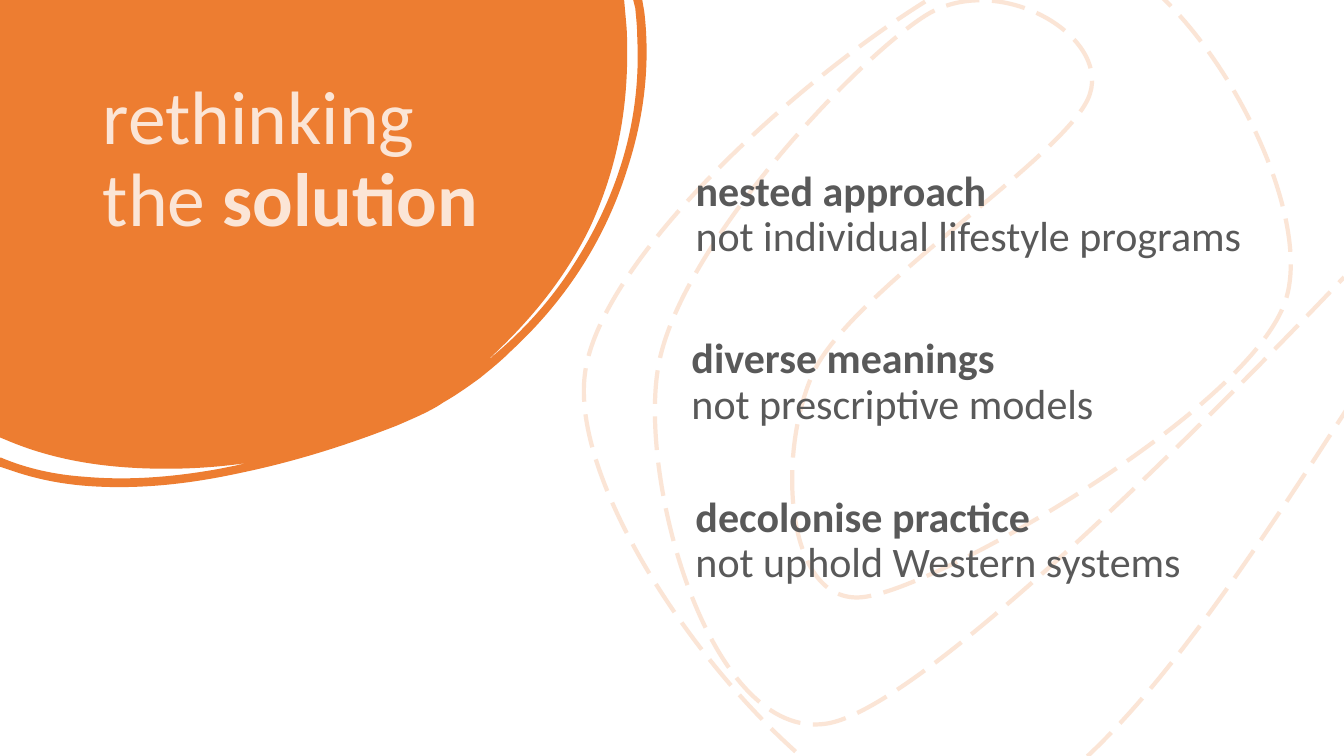
from math import cos, radians, sin

from lxml.etree import SubElement
from pptx import Presentation
from pptx.dml.color import RGBColor
from pptx.enum.dml import MSO_LINE
from pptx.enum.text import MSO_ANCHOR, MSO_AUTO_SIZE, PP_ALIGN
from pptx.oxml.ns import qn
from pptx.util import Inches, Pt

LONG_DASH = MSO_LINE.LONG_DASH
TOP, LEFT, FIXED = MSO_ANCHOR.TOP, PP_ALIGN.LEFT, MSO_AUTO_SIZE.NONE

COLUMNS, ROWS = 1333, 750
TITLE_ONLY = 5
ORANGE, PEACH, GREY = "ED7D31", "FBE5D6", "595959"

# Places are column, row, columns wide, rows high.
# Outlines are in grid units: a pair is a corner, six numbers are a cubic curve.
BLOB_PLACE, BLOB_TURN = (-116, -121, 785, 572), 148.1
BLOB = [
    (0, 0), (619, 0), (621, 23),
    (622, 33, 622, 44, 622, 54), (622, 115, 610, 173, 584, 228),
    (559, 278, 525, 319, 485, 356), (486, 356, 488, 354, 489, 353),
    (519, 328, 545, 299, 566, 267), (612, 197, 636, 121, 632, 38),
    (632, 28, 631, 18, 630, 8), (628, 0), (637, 0), (639, 12),
    (645, 64, 639, 116, 622, 168), (600, 238, 561, 298, 507, 348),
    (497, 358, 487, 366, 476, 375), (465, 383, 454, 391, 440, 399),
    (427, 408, 410, 415, 394, 422), (343, 442, 292, 458, 239, 469),
    (189, 480, 137, 486, 85, 482), (60, 480, 35, 475, 12, 467),
    (0, 463), (0, 454), (1, 454),
    (27, 465, 55, 471, 84, 473), (129, 477, 174, 473, 218, 465),
    (223, 464, 228, 463, 233, 462), (237, 461, 242, 460, 247, 459),
    (220, 463, 193, 465, 165, 465), (110, 465, 56, 458, 5, 436), (0, 434),
]
LOOP_PLACE, LOOP_TURN = (577, 41, 795, 668), 133.2
DASHED_LOOP = [
    (1369, 354),
    (1220, 587, 1071, 821, 939, 824), (808, 827, 562, 519, 580, 372),
    (597, 226, 927, -41, 1043, -54), (1159, -67, 1307, 187, 1276, 295),
    (1245, 403, 937, 580, 859, 592), (780, 605, 769, 454, 806, 371),
    (843, 288, 1063, 152, 1081, 93), (1100, 34, 988, -30, 917, 16),
    (845, 62, 668, 252, 652, 369), (635, 486, 706, 734, 819, 718),
    (933, 702, 1333, 275, 1333, 275),
]
POINTS = [
    ((676, 330, 561, 158), "diverse meanings", "not prescriptive models"),
    ((680, 164, 622, 137), "nested approach", "not individual lifestyle programs"),
    ((680, 487, 700, 158), "decolonise practice", "not uphold Western systems"),
]


def colour(hex_string):
    return RGBColor.from_string(hex_string)


def turned_back(point, place, turn):
    """Give a slide point inside the unturned frame, from the frame's corner."""
    left, top, width, height = place
    x, y = point[0] - left - width / 2, point[1] - top - height / 2
    c, s = cos(radians(turn)), sin(radians(turn))
    return width / 2 + x * c + y * s, height / 2 - x * s + y * c


class SlideBuilder:
    font = "Calibri"
    title_size, body_size = Pt(54), Pt(30)
    line_spacing = 0.9

    def __init__(self, presentation):
        self.column = presentation.slide_width / COLUMNS
        self.row = presentation.slide_height / ROWS
        self.slide = presentation.slides.add_slide(
            presentation.slide_layouts[TITLE_ONLY])

    def to_slide(self, column, row):
        return round(column * self.column), round(row * self.row)

    def put(self, shape, place):
        shape.left, shape.top = self.to_slide(*place[:2])
        shape.width, shape.height = self.to_slide(*place[2:])

    def outline(self, nodes, place, turn, close):
        """Draw corners and true curves in a turned frame."""
        local = [[self.to_slide(*turned_back(node[i:i + 2], place, turn))
                  for i in range(0, len(node), 2)] for node in nodes]
        builder = self.slide.shapes.build_freeform(*local[0][0])
        builder.add_line_segments([node[-1] for node in local[1:]], close=close)
        shape = builder.convert_to_shape()
        self.put(shape, place)
        shape.rotation = turn
        shape.shadow.inherit = False

        geometry = next(shape.element.iter(qn("a:path")))
        for segment in list(geometry):
            geometry.remove(segment)
        geometry.set("w", str(shape.width))
        geometry.set("h", str(shape.height))
        for index, node in enumerate(local):
            kind = "cubicBezTo" if len(node) == 3 else "lnTo" if index else "moveTo"
            segment = SubElement(geometry, qn("a:" + kind))
            for x, y in node:
                SubElement(segment, qn("a:pt"), x=str(x), y=str(y))
        if close:
            SubElement(geometry, qn("a:close"))
        return shape

    def filled_outline(self, nodes, place, turn, fill):
        shape = self.outline(nodes, place, turn, close=True)
        shape.fill.solid()
        shape.fill.fore_color.rgb = colour(fill)
        shape.line.fill.background()

    def dashed_outline(self, nodes, place, turn, line):
        shape = self.outline(nodes, place, turn, close=False)
        shape.fill.background()
        shape.line.color.rgb = colour(line)
        shape.line.width = Pt(3)
        shape.line.dash_style = LONG_DASH

    def paragraph(self, frame, size, text_colour):
        frame.word_wrap = True
        frame.auto_size = FIXED
        frame.vertical_anchor = TOP
        paragraph = frame.paragraphs[0]
        paragraph.alignment = LEFT
        paragraph.line_spacing = self.line_spacing
        paragraph.font.name = self.font
        paragraph.font.size = size
        paragraph.font.color.rgb = colour(text_colour)
        return paragraph

    def run(self, paragraph, text, bold):
        run = paragraph.add_run()
        run.text = text
        run.font.bold = bold

    def title(self, place, plain, strong):
        """Fill the title and bring it in front of what is drawn so far."""
        title = self.slide.shapes.title
        self.put(title, place)
        title.element.getparent().append(title.element)
        paragraph = self.paragraph(title.text_frame, self.title_size, PEACH)
        self.run(paragraph, plain, False)
        self.run(paragraph, strong, True)

    def point(self, place, heading, contrast):
        box = self.slide.shapes.add_textbox(
            *self.to_slide(*place[:2]), *self.to_slide(*place[2:]))
        paragraph = self.paragraph(box.text_frame, self.body_size, GREY)
        paragraph.space_before = Pt(10)
        self.run(paragraph, heading, True)
        paragraph.add_line_break()
        self.run(paragraph, contrast, False)


def main():
    presentation = Presentation()
    presentation.slide_width = Inches(13.33)
    presentation.slide_height = Inches(7.5)

    builder = SlideBuilder(presentation)
    builder.filled_outline(BLOB, BLOB_PLACE, BLOB_TURN, ORANGE)
    builder.title((92, 74, 394, 264), "rethinking the ", "solution")
    builder.dashed_outline(DASHED_LOOP, LOOP_PLACE, LOOP_TURN, PEACH)
    for place, heading, contrast in POINTS:
        builder.point(place, heading, contrast)

    presentation.save("out.pptx")


if __name__ == "__main__":
    main()
